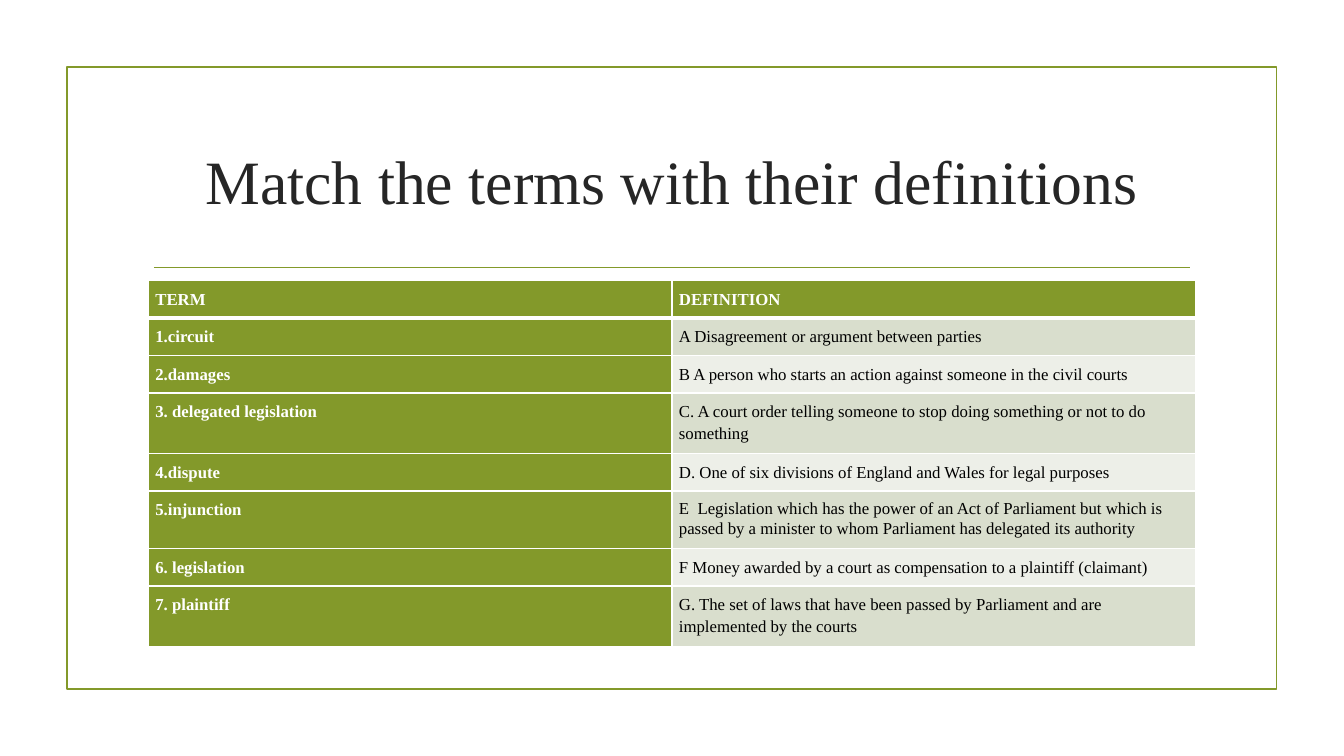
from dataclasses import dataclass

from lxml import etree
from pptx import Presentation
from pptx.dml.color import RGBColor
from pptx.enum import shapes, text
from pptx.oxml import ns
from pptx.util import Pt


@dataclass(frozen=True)
class Theme:
    """Colours, font and type sizes of the slide."""
    green: str = "83992A"
    ink: str = "262626"
    black: str = "000000"
    white: str = "FFFFFF"
    bands: tuple = ("D9DECD", "EDEFE8")
    font: str = "Times New Roman"
    head: float = 44
    body: float = 12
    rule: float = 1.25
    thin: float = 1
    thick: float = 3
    pad: float = 5


LOOK = Theme()
TITLE = "Match the terms with their definitions"
ROWS = [
    ("TERM", "DEFINITION", 26.8),
    ("1.circuit", "A Disagreement or argument between parties", 26.8),
    ("2.damages", "B A person who starts an action against someone in the civil courts", 26.8),
    ("3. delegated legislation",
     "C. A court order telling someone to stop doing something or not to do something", 43.2),
    ("4.dispute", "D. One of six divisions of England and Wales for legal purposes", 26.8),
    ("5.injunction",
     "E  Legislation which has the power of an Act of Parliament but which is passed "
     "by a minister to whom Parliament has delegated its authority", 41),
    ("6. legislation", "F Money awarded by a court as compensation to a plaintiff (claimant)", 26.8),
    ("7. plaintiff",
     "G. The set of laws that have been passed by Parliament and are implemented by the courts", 43.2),
]
TIGHT = 5


def tint(hue):
    """Turn a hex string into a colour."""
    return RGBColor.from_string(hue)


def style(para, size, hue, bold=False):
    """Format the runs of one paragraph."""
    for run in para.runs:
        run.font.name = LOOK.font
        run.font.size = Pt(size)
        run.font.bold = bold
        run.font.color.rgb = tint(hue)


def frame(slide, x, y, w, h):
    """Draw the outline round the slide content."""
    box = slide.shapes.add_shape(shapes.MSO_SHAPE.RECTANGLE, Pt(x), Pt(y), Pt(w), Pt(h))
    box.shadow.inherit = False
    box.fill.background()
    box.line.color.rgb = tint(LOOK.green)
    box.line.width = Pt(LOOK.rule)


def header(slide, x, y, w, h):
    """Place the title and the rule beneath it."""
    box = slide.shapes.add_textbox(Pt(x), Pt(y), Pt(w), Pt(h))
    body = box.text_frame
    body.word_wrap = True
    body.vertical_anchor = text.MSO_ANCHOR.MIDDLE
    body.text = TITLE
    para = body.paragraphs[0]
    para.alignment = text.PP_ALIGN.CENTER
    style(para, LOOK.head, LOOK.ink)
    low = Pt(y + h + 11)
    rule = slide.shapes.add_connector(
        shapes.MSO_CONNECTOR.STRAIGHT, Pt(x + 8), low, Pt(x + w - 8), low)
    rule.line.color.rgb = tint(LOOK.green)
    rule.line.width = Pt(LOOK.rule)
    etree.SubElement(rule.element.spPr, ns.qn("a:effectLst"))


def edge(cell, sizes):
    """Give a cell white borders: left, right, top, bottom."""
    props = cell._tc.get_or_add_tcPr()
    for i, (side, size) in enumerate(zip("LRTB", sizes)):
        line = etree.Element(ns.qn("a:ln" + side), w=str(Pt(size)))
        fill = etree.SubElement(line, ns.qn("a:solidFill"))
        etree.SubElement(fill, ns.qn("a:srgbClr"), val=LOOK.white)
        props.insert(i, line)


def grid(slide, x, y, w):
    """Build the table of terms and definitions."""
    high = sum(row[-1] for row in ROWS)
    table = slide.shapes.add_table(len(ROWS), 2, Pt(x), Pt(y), Pt(w), Pt(high)).table
    for col in table.columns:
        col.width = Pt(w / 2)
    for r, (term, sense, tall) in enumerate(ROWS):
        table.rows[r].height = Pt(tall)
        for c, words in enumerate((term, sense)):
            cell = table.cell(r, c)
            bold = r == 0 or c == 0
            cell.margin_left = cell.margin_right = Pt(LOOK.pad)
            cell.margin_top = cell.margin_bottom = Pt(LOOK.pad)
            cell.fill.solid()
            cell.fill.fore_color.rgb = tint(LOOK.green if bold else LOOK.bands[(r - 1) % 2])
            edge(cell, (LOOK.thin, LOOK.thin,
                        LOOK.thick if r == 1 else LOOK.thin,
                        LOOK.thick if r == 0 else LOOK.thin))
            cell.text_frame.text = words
            para = cell.text_frame.paragraphs[0]
            para.line_spacing = 1.15
            if (r, c) == (TIGHT, 1):
                para.line_spacing = 1.07
                para.space_after = Pt(8)
            style(para, LOOK.body, LOOK.white if bold else LOOK.black, bold)


def main():
    """Build and save the slide."""
    deck = Presentation()
    deck.slide_width, deck.slide_height = Pt(960), Pt(540)
    slide = deck.slides.add_slide(deck.slide_layouts[6])
    frame(slide, 47.8, 48, 864, 444)
    header(slide, 102, 77, 756, 103)
    grid(slide, 106, 200.4, 748)
    deck.save("out.pptx")


if __name__ == "__main__":
    main()
